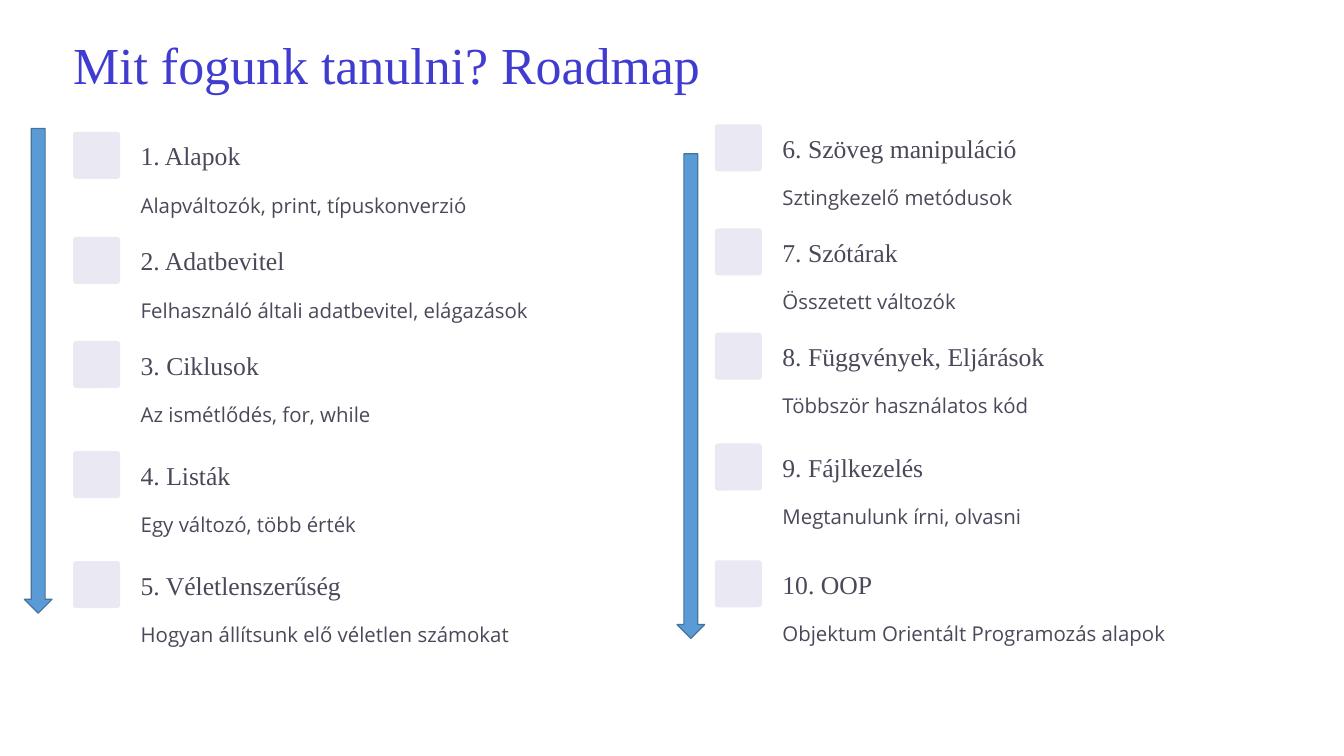
from pptx import Presentation
from pptx.dml.color import RGBColor
from pptx.enum.shapes import MSO_SHAPE
from pptx.enum.text import MSO_ANCHOR, MSO_AUTO_SIZE, PP_ALIGN
from pptx.util import Inches, Pt

ROUNDED = MSO_SHAPE.ROUNDED_RECTANGLE
DOWN_ARROW = MSO_SHAPE.DOWN_ARROW
TOP = MSO_ANCHOR.TOP
NO_AUTOFIT = MSO_AUTO_SIZE.NONE
LEFT = PP_ALIGN.LEFT
TITLE_ONLY = 5

COLORS = {
    "title": "403CCF",
    "body": "49495A",
    "marker": "EAE8F3",
    "arrow": "5B9BD5",
    "arrow_edge": "43739E",
}
STYLES = {
    "title": {"font": "Times New Roman", "size": 44.5, "spacing": 55.5, "color": "title"},
    "topic": {"font": "Times New Roman", "size": 22, "spacing": 27.5, "color": "body"},
    "detail": {"font": "Open Sans", "size": 17.5, "spacing": 28.5, "color": "body"},
}
FRAME_FORMAT = {
    "margin_left": 0,
    "margin_top": 0,
    "margin_right": 0,
    "margin_bottom": 0,
    "word_wrap": False,
    "auto_size": NO_AUTOFIT,
    "vertical_anchor": TOP,
}
TITLE_BOX = (0.87, 0.36, 8.2, 0.78)
COLUMNS = [
    {
        "left": 0.87,
        "arrow_box": (0.29, 1.53, 0.33, 5.77),
        "steps": [
            (1.57, "1. Alapok", "Alapváltozók, print, típuskonverzió"),
            (2.82, "2. Adatbevitel", "Felhasználó általi adatbevitel, elágazások"),
            (4.06, "3. Ciklusok", "Az ismétlődés, for, while"),
            (5.37, "4. Listák", "Egy változó, több érték"),
            (6.68, "5. Véletlenszerűség", "Hogyan állítsunk elő véletlen számokat"),
        ],
    },
    {
        "left": 8.51,
        "arrow_box": (8.06, 1.83, 0.33, 5.77),
        "steps": [
            (1.48, "6. Szöveg manipuláció", "Sztingkezelő metódusok"),
            (2.72, "7. Szótárak", "Összetett változók"),
            (3.96, "8. Függvények, Eljárások", "Többször használatos kód"),
            (5.28, "9. Fájlkezelés", "Megtanulunk írni, olvasni"),
            (6.67, "10. OOP", "Objektum Orientált Programozás alapok"),
        ],
    },
]


def color(name):
    return RGBColor.from_string(COLORS[name])


def write(shape, text, style_name):
    style = STYLES[style_name]
    frame = shape.text_frame
    for name, value in FRAME_FORMAT.items():
        setattr(frame, name, value)
    para = frame.paragraphs[0]
    para.alignment = LEFT
    para.line_spacing = Pt(style["spacing"])
    span = para.add_run()
    span.text = text
    span.font.name = style["font"]
    span.font.size = Pt(style["size"])
    span.font.color.rgb = color(style["color"])


def add_label(page, box, text, style_name):
    write(page.shapes.add_textbox(*map(Inches, box)), text, style_name)


def add_filled(page, kind, box, fill):
    shape = page.shapes.add_shape(kind, *map(Inches, box))
    shape.shadow.inherit = False
    shape.fill.solid()
    shape.fill.fore_color.rgb = color(fill)
    return shape


def add_title(page, box, text):
    title = page.shapes.title
    for name, value in zip(("left", "top", "width", "height"), box):
        setattr(title, name, Inches(value))
    write(title, text, "title")


def add_step(page, left, top, topic, detail):
    marker = add_filled(page, ROUNDED, (left, top, 0.56, 0.56), "marker")
    marker.adjustments[0] = 0.067
    marker.line.fill.background()
    add_label(page, (left + 0.805, top + 0.085, 3.1, 0.39), topic, "topic")
    add_label(page, (left + 0.805, top + 0.62, 6.17, 0.4), detail, "detail")


def add_arrow(page, box):
    arrow = add_filled(page, DOWN_ARROW, box, "arrow")
    arrow.line.color.rgb = color("arrow_edge")
    arrow.line.width = Pt(1)


def main():
    deck = Presentation()
    deck.slide_width = Inches(16)
    deck.slide_height = Inches(9)
    page = deck.slides.add_slide(deck.slide_layouts[TITLE_ONLY])
    add_title(page, TITLE_BOX, "Mit fogunk tanulni? Roadmap")
    for column in COLUMNS:
        for top, topic, detail in column["steps"]:
            add_step(page, column["left"], top, topic, detail)
    for column in COLUMNS:
        add_arrow(page, column["arrow_box"])
    deck.save("out.pptx")


if __name__ == "__main__":
    main()
